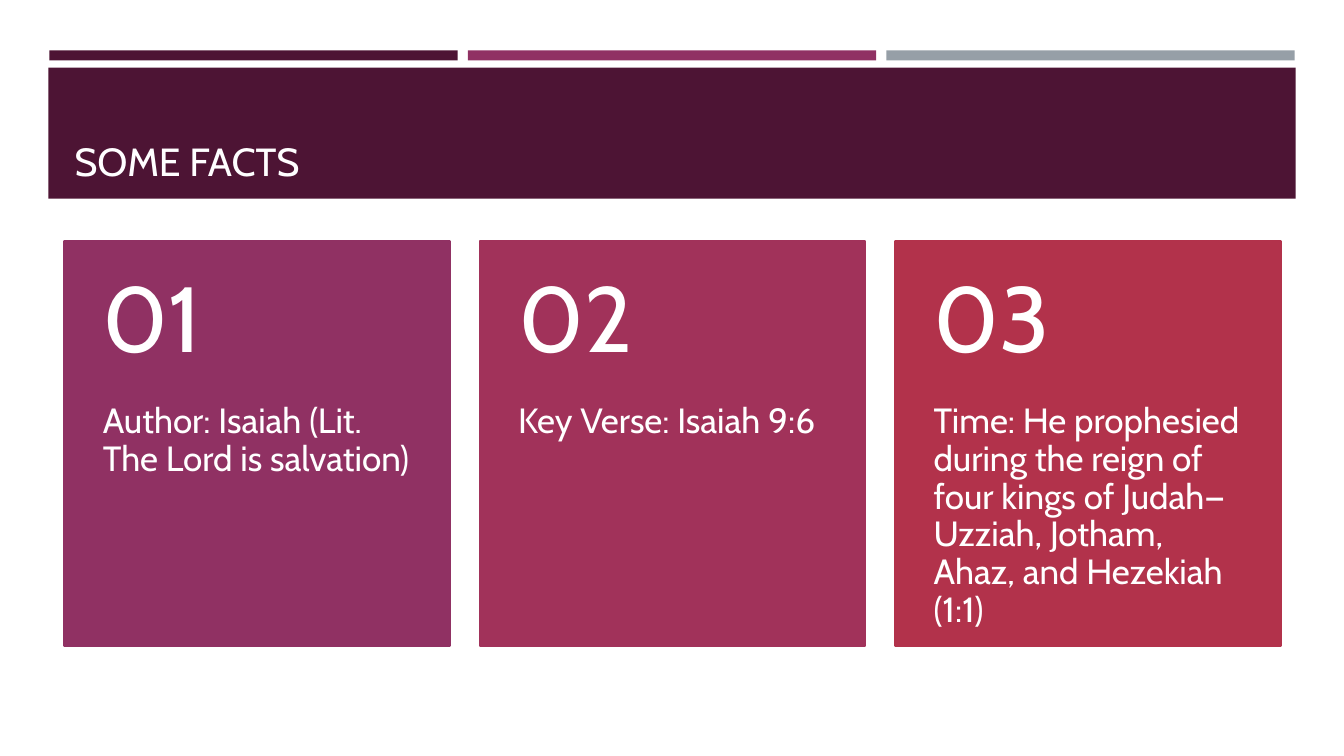
"""Build the "Some facts" slide with a title band and three numbered cards."""
from dataclasses import dataclass

from pptx import Presentation
from pptx.dml.color import RGBColor
from pptx.enum.shapes import MSO_SHAPE
from pptx.enum.text import MSO_ANCHOR as Anchor, MSO_AUTO_SIZE as AutoSize, PP_ALIGN as Align
from pptx.util import Inches, Pt


@dataclass(frozen=True)
class Theme:
    font: str = "Cabin"
    dark: str = "4D1434"
    plum: str = "903163"
    gray: str = "969FA7"
    rose: str = "A1325A"
    red: str = "B2324B"
    title_text: str = "FFFEFF"
    card_text: str = "FFFFFF"
    title_size: int = 28
    number_size: int = 66
    fact_size: int = 25


theme = Theme()


def add_block(left, top, width, height, color):
    shape = slide.shapes.add_shape(
        MSO_SHAPE.RECTANGLE, Inches(left), Inches(top), Inches(width), Inches(height))
    shape.shadow.inherit = False
    shape.fill.solid()
    shape.fill.fore_color.rgb = RGBColor.from_string(color)
    shape.line.fill.background()
    return shape


def write(shape, text, size, color, anchor):
    frame = shape.text_frame
    frame.word_wrap = True
    frame.auto_size = AutoSize.NONE
    frame.vertical_anchor = anchor
    paragraph = frame.paragraphs[0]
    paragraph.alignment = Align.LEFT
    run = paragraph.add_run()
    run.text = text
    run.font.name = theme.font
    run.font.size = Pt(size)
    run.font.color.rgb = RGBColor.from_string(color)
    return frame


presentation = Presentation()
presentation.slide_width = Inches(13.33)
presentation.slide_height = Inches(7.5)
slide = presentation.slides.add_slide(presentation.slide_layouts[5])

for column, color in enumerate([theme.dark, theme.plum, theme.gray]):
    add_block(0.49 + 4.15 * column, 0.5, 4.05, 0.1, color)

band = add_block(0.48, 0.67, 12.37, 1.3, theme.dark)
title = slide.shapes.title
title.left, title.top = Inches(0.64), Inches(0.77)
title.width, title.height = Inches(12.06), Inches(1.11)
write(title, "SOME FACTS", theme.title_size, theme.title_text, Anchor.BOTTOM)
band.element.addnext(title.element)

facts = [
    (theme.plum, "Author: Isaiah (Lit. The Lord is salvation)"),
    (theme.rose, "Key Verse: Isaiah 9:6"),
    (theme.red, "Time: He prophesied during the reign of four kings of Judah—"
                "Uzziah, Jotham, Ahaz, and Hezekiah (1:1)"),
]
card_top, card_width, card_height = 2.39, 3.82, 4.02
number_height = 1.61

for column, (color, fact) in enumerate(facts):
    left = 0.64 + 4.12 * column
    card = add_block(left, card_top, card_width, card_height, color)
    card.line.color.rgb = RGBColor.from_string(color)
    card.line.width = Pt(1.75)

    parts = [
        (fact, card_top + number_height, card_height - number_height,
         theme.fact_size, Anchor.TOP, 0, 0.36),
        (f"{column + 1:02}", card_top, number_height,
         theme.number_size, Anchor.MIDDLE, 0.18, 0.18),
    ]
    for text, top, height, size, anchor, margin_top, margin_bottom in parts:
        box = slide.shapes.add_textbox(
            Inches(left), Inches(top), Inches(card_width), Inches(height))
        frame = write(box, text, size, theme.card_text, anchor)
        frame.margin_left = frame.margin_right = Inches(0.38)
        frame.margin_top = Inches(margin_top)
        frame.margin_bottom = Inches(margin_bottom)
        frame.paragraphs[0].line_spacing = 0.9

presentation.save("out.pptx")
